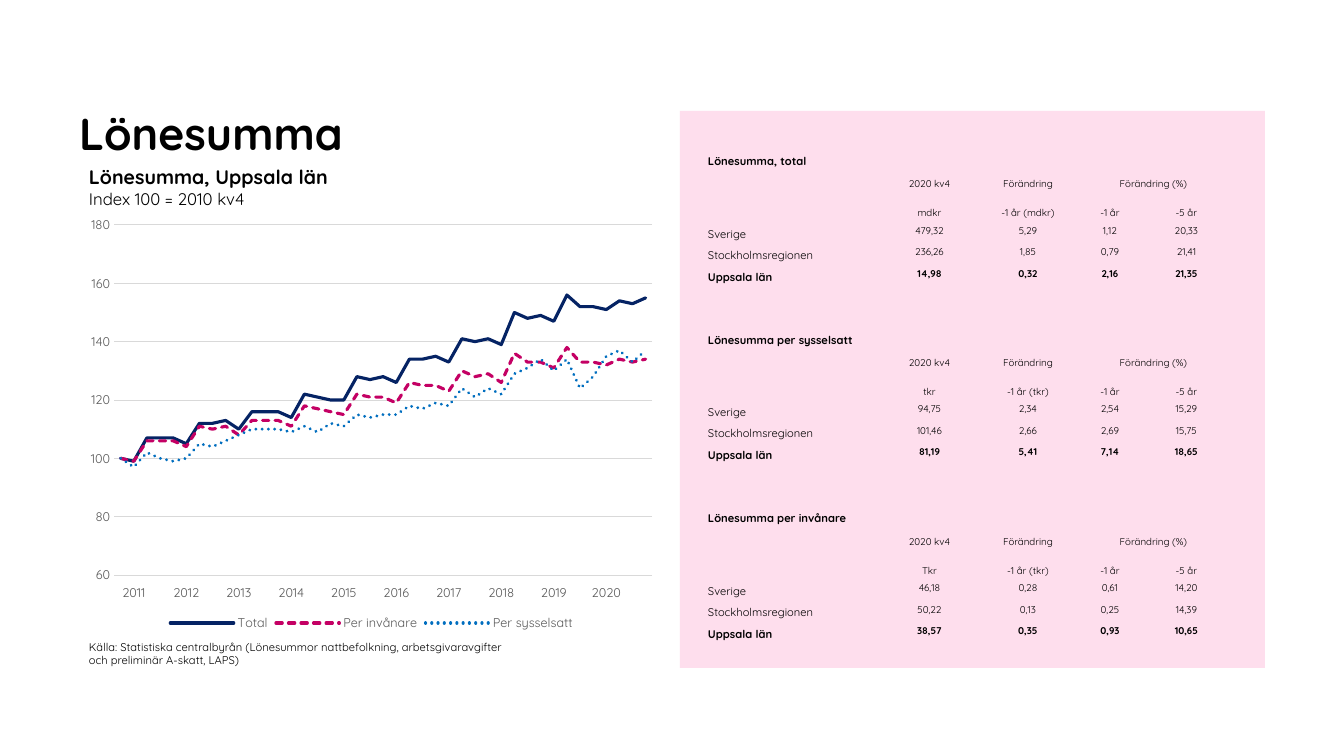
from dataclasses import dataclass

from lxml import etree
from pptx import Presentation
from pptx.chart import data as chart_data
from pptx.dml import color
from pptx.enum import chart as chart_enum, dml, shapes, text
from pptx.oxml import ns, parse_xml
from pptx.util import Pt

TITLE = "Lönesumma"
SUBTITLE, INDEX_NOTE = "Lönesumma, Uppsala län", "Index 100 = 2010 kv4"
SOURCE = ("Källa: Statistiska centralbyrån (Lönesummor nattbefolkning, "
          "arbetsgivaravgifter och preliminär A-skatt, LAPS)")

# Heading, level unit, change unit, rows
SECTIONS = [
    ("Lönesumma, total", "mdkr", "mdkr", [
        ("Sverige", "479,32", "5,29", "1,12", "20,33"),
        ("Stockholmsregionen", "236,26", "1,85", "0,79", "21,41"),
        ("Uppsala län", "14,98", "0,32", "2,16", "21,35")]),
    ("Lönesumma per sysselsatt", "tkr", "tkr", [
        ("Sverige", "94,75", "2,34", "2,54", "15,29"),
        ("Stockholmsregionen", "101,46", "2,66", "2,69", "15,75"),
        ("Uppsala län", "81,19", "5,41", "7,14", "18,65")]),
    ("Lönesumma per invånare", "Tkr", "tkr", [
        ("Sverige", "46,18", "0,28", "0,61", "14,20"),
        ("Stockholmsregionen", "50,22", "0,13", "0,25", "14,39"),
        ("Uppsala län", "38,57", "0,35", "0,93", "10,65")]),
]
COLUMN_WIDTHS = [173, 99, 98, 66, 87]
SECTION_HEIGHTS = [42, 22, 29, 22, 21, 22, 21]  # heading to blank row
FIRST_HEADING_HEIGHT = 21

QUARTERS = 41  # 2010 kv4 to 2020 kv4
SERIES = [
    ("Total", "052364", None,
     [100, 99, 107, 107, 107, 105, 112, 112, 113, 110, 116, 116, 116, 114,
      122, 121, 120, 120, 128, 127, 128, 126, 134, 134, 135, 133, 141, 140,
      141, 139, 150, 148, 149, 147, 156, 152, 152, 151, 154, 153, 155]),
    ("Per invånare", "C40064", dml.MSO_LINE.SQUARE_DOT,
     [100, 99, 106, 106, 106, 104, 111, 110, 111, 108, 113, 113, 113, 111,
      118, 117, 116, 115, 122, 121, 121, 119, 126, 125, 125, 123, 130, 128,
      129, 126, 136, 133, 133, 131, 138, 133, 133, 132, 134, 133, 134]),
    ("Per sysselsatt", "006EBF", dml.MSO_LINE.ROUND_DOT,
     [100, 97, 102, 100, 99, 100, 105, 104, 106, 108, 110, 110, 110, 109,
      111, 109, 112, 111, 115, 114, 115, 115, 118, 117, 119, 118, 124, 121,
      124, 122, 129, 131, 134, 130, 134, 124, 128, 135, 137, 133, 137]),
]


@dataclass(frozen=True)
class Theme:
    font: str = "Quicksand"
    ink: str = "000000"
    muted: str = "595959"
    grid: str = "D9D9D9"
    panel: str = "FEDEED"
    title: int = 32
    subtitle: int = 14
    note: int = 12
    chart: int = 9
    label: int = 8
    value: int = 7


THEME = Theme()
NO_TABLE_STYLE = "{2D5ABB26-0587-4C30-8999-92F81FD0307C}"


def px(length):
    return round(length * 914400 / 100.8)


def box(*lengths):
    return [px(length) for length in lengths]


def set_all(target, **values):
    for name, value in values.items():
        setattr(target, name, value)


def set_font(font, size, ink=THEME.ink, bold=False):
    set_all(font, name=THEME.font, size=Pt(size), bold=bold)
    font.color.rgb = color.RGBColor.from_string(ink)


def set_line(line, ink, width):
    line.color.rgb = color.RGBColor.from_string(ink)
    line.width = Pt(width)


def add_run(paragraph, words, size, bold=False):
    run = paragraph.add_run()
    run.text = words
    set_font(run.font, size, bold=bold)


def add_textbox(slide, frame, lines):
    """Add one paragraph whose (words, size, bold) lines are split by breaks."""
    text_frame = slide.shapes.add_textbox(*box(*frame)).text_frame
    text_frame.word_wrap = True
    paragraph = text_frame.paragraphs[0]
    for number, line in enumerate(lines):
        if number:
            paragraph.add_line_break()
        add_run(paragraph, *line)


def add_title(slide):
    title = slide.shapes.title
    set_all(title, **dict(zip(("left", "top", "width", "height"), box(79, 37, 929, 123))))
    frame = title.text_frame
    set_all(frame, margin_left=0, margin_top=0, margin_right=0, margin_bottom=0,
            vertical_anchor=text.MSO_ANCHOR.BOTTOM, word_wrap=True)
    frame.paragraphs[0].alignment = text.PP_ALIGN.LEFT
    add_run(frame.paragraphs[0], TITLE, THEME.title, True)


def add_panel(slide):
    panel = slide.shapes.add_shape(shapes.MSO_SHAPE.RECTANGLE, *box(680, 111, 585, 557))
    panel.shadow.inherit = False
    panel.fill.solid()
    panel.fill.fore_color.rgb = color.RGBColor.from_string(THEME.panel)
    panel.line.fill.background()


def table_rows():
    """Yield (cells, bold, values) for every row."""
    for number, (heading, unit, change_unit, regions) in enumerate(SECTIONS):
        if number:
            yield [""] * 5, False, False
        yield [heading, "", "", "", ""], True, False
        yield ["", "2020 kv4", "Förändring", "Förändring (%)", ""], False, False
        yield ["", unit, f"-1 år ({change_unit})", "-1 år", "-5 år"], False, False
        for region in regions:
            yield region, region is regions[-1], True


def add_wage_table(slide):
    rows = list(table_rows())
    heights = (SECTION_HEIGHTS * len(SECTIONS))[:len(rows)]
    heights[0] = FIRST_HEADING_HEIGHT
    frame = slide.shapes.add_table(len(rows), len(COLUMN_WIDTHS),
                                   *box(707, 147, sum(COLUMN_WIDTHS), sum(heights)))
    table = frame.table
    set_all(table, first_row=False, horz_banding=False)
    table._tbl.tblPr.find(ns.qn("a:tableStyleId")).text = NO_TABLE_STYLE
    for column, width in zip(table.columns, COLUMN_WIDTHS):
        column.width = px(width)
    for row_number, (cells, bold, values) in enumerate(rows):
        table.rows[row_number].height = px(heights[row_number])
        for column_number, words in enumerate(cells):
            cell = table.cell(row_number, column_number)
            centred = column_number > 0
            size = THEME.value if centred else THEME.label
            middle = values and centred
            set_all(cell, margin_left=px(1), margin_top=px(1), margin_right=px(1),
                    margin_bottom=0, vertical_anchor=text.MSO_ANCHOR.MIDDLE if middle
                    else text.MSO_ANCHOR.BOTTOM)
            cell.fill.background()
            paragraph = cell.text_frame.paragraphs[0]
            paragraph.alignment = text.PP_ALIGN.CENTER if centred else text.PP_ALIGN.LEFT
            if words:
                add_run(paragraph, words, size, bold)
            else:
                etree.SubElement(paragraph._p, ns.qn("a:endParaRPr"), sz=str(size * 100))
        if cells[3].startswith("Förändring"):
            table.cell(row_number, 3).merge(table.cell(row_number, 4))


def set_plot_layout(chart, **fractions):
    plot_area = chart._chartSpace.chart.plotArea
    for layout in plot_area.findall(ns.qn("c:layout")):
        plot_area.remove(layout)
    parts = "".join(f'<c:{name} val="{value}"/>' for name, value in fractions.items())
    plot_area.insert(0, parse_xml(
        f'<c:layout {ns.nsdecls("c")}><c:manualLayout><c:layoutTarget val="inner"/>'
        f'<c:xMode val="edge"/><c:yMode val="edge"/>{parts}</c:manualLayout></c:layout>'))


def add_index_chart(slide):
    data = chart_data.CategoryChartData(number_format="0")
    data.categories = [str(2011 + quarter // 4) if quarter % 4 == 1 else ""
                       for quarter in range(QUARTERS)]
    for name, _, _, values in SERIES:
        data.add_series(name, values)
    chart = slide.shapes.add_chart(chart_enum.XL_CHART_TYPE.LINE,
                                   *box(79, 208, 585, 427), data).chart
    set_all(chart, has_title=False, has_legend=True)
    set_font(chart.font, THEME.chart, THEME.muted)
    set_all(chart.legend, position=chart_enum.XL_LEGEND_POSITION.BOTTOM,
            include_in_layout=False)
    set_font(chart.legend.font, THEME.chart, THEME.muted)
    chart.plots[0].vary_by_categories = False
    for series, (_, ink, dash, _) in zip(chart.plots[0].series, SERIES):
        series.smooth = False
        series.marker.style = chart_enum.XL_MARKER_STYLE.NONE
        set_line(series.format.line, ink, 2.25)
        series.format.line._ln.set("cap", "rnd")
        if dash:
            series.format.line.dash_style = dash
    years, index = chart.category_axis, chart.value_axis
    for axis in (years, index):
        set_all(axis, major_tick_mark=chart_enum.XL_TICK_MARK.NONE,
                minor_tick_mark=chart_enum.XL_TICK_MARK.NONE)
        set_font(axis.tick_labels.font, THEME.chart, THEME.muted)
    years.tick_label_position = chart_enum.XL_TICK_LABEL_POSITION.LOW
    set_line(years.format.line, THEME.grid, 0.75)
    years._element.find(ns.qn("c:noMultiLvlLbl")).addprevious(
        parse_xml(f'<c:tickLblSkip {ns.nsdecls("c")} val="1"/>'))
    set_all(index, minimum_scale=60, maximum_scale=180, major_unit=20, crosses_at=100)
    index.format.line.fill.background()
    set_line(index.major_gridlines.format.line, THEME.grid, 0.75)
    set_plot_layout(chart, x=0.06, y=0.04, w=0.92, h=0.82)


def main():
    presentation = Presentation()
    set_all(presentation, slide_width=px(1344), slide_height=px(756))
    slide = presentation.slides.add_slide(presentation.slide_layouts[5])
    add_panel(slide)
    add_title(slide)
    add_textbox(slide, (79, 635, 445, 37), [(SOURCE, THEME.label)])
    add_textbox(slide, (79, 160, 585, 54), [(SUBTITLE, THEME.subtitle, True),
                                          (INDEX_NOTE, THEME.note)])
    add_wage_table(slide)
    add_index_chart(slide)
    presentation.save("out.pptx")


if __name__ == "__main__":
    main()
